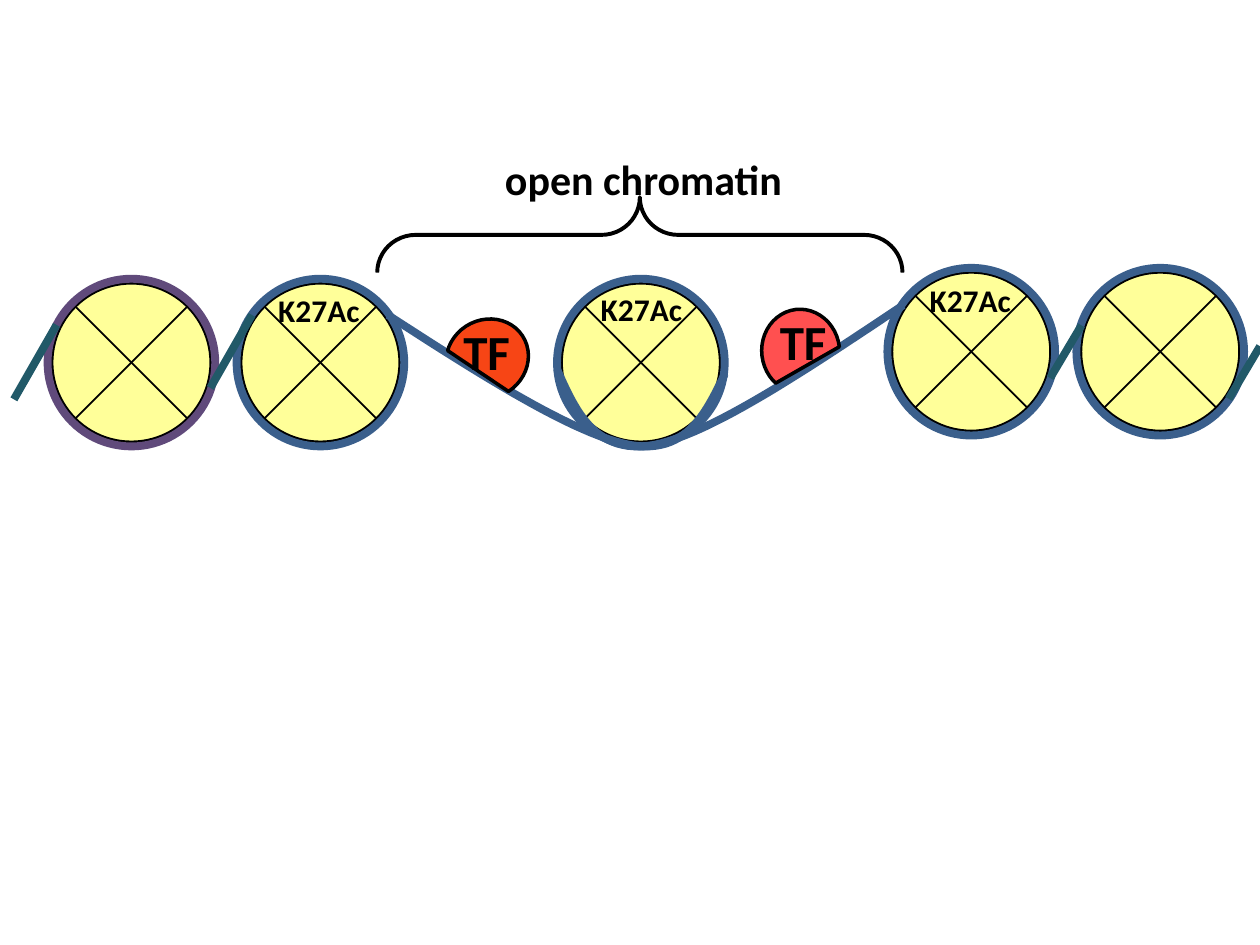
import pptx
import pptx.dml.color
import pptx.enum.shapes
import pptx.enum.text
import pptx.oxml.ns
import pptx.util
from lxml import etree

Cm, Pt = pptx.util.Cm, pptx.util.Pt
RGB = pptx.dml.color.RGBColor.from_string
MSO = pptx.enum.shapes.MSO_SHAPE

THEME = {
    "black": "000000", "core": "FFFF99", "purple": "604A7B", "blue": "3A5F8C",
    "teal": "215968", "orange": "F74515", "red": "FF5050",
    "font": "Calibri", "dna": 4.5, "cross": 1, "factor": 2, "brace": 2.25,
    "mark_size": 18, "title_size": 24, "factor_size": 28,
}

# Content, all lengths in cm
DISC, RING_GAP = 3.18, 0.1
NUCLEOSOMES = [  # left, top, ring colour
    (1.06, 5.72, "purple"), (4.87, 5.72, "blue"), (11.33, 5.72, "blue"),
    (17.99, 5.5, "blue"), (21.8, 5.5, "blue"),
]
LINKERS = [  # x1, y1, x2, y2
    (4.24, 7.82, 5.08, 6.35), (0.28, 8.05, 1.14, 6.55),
    (21.17, 7.62, 21.8, 6.56), (24.77, 8.04, 25.4, 6.98),
]
OPEN_DNA = [  # start, then two cubic curves of three points each
    [(7.82, 6.35), (9.7, 7.57), (11.58, 8.76), (12.7, 8.97),
     (13.82, 9.17), (14.22, 8.36), (14.61, 7.54)],
    [(18.21, 6.15), (16.28, 7.44), (14.35, 8.74), (13.18, 8.97),
     (12.01, 9.17), (11.61, 8.31), (11.23, 7.44)],
]
FACTORS = [  # left, top, rotation, fill
    (8.97, 6.45, 146.8, "orange"), (15.29, 6.3, 83.2, "red"),
]
BRACE = (12.14, -0.56, 1.52, 10.59)
LABELS = [  # text, left, top, width, height, size
    ("TF", 9.09, 6.35, 1.47, 1.45, "factor_size"),
    ("TF", 15.47, 6.15, 1.47, 1.45, "factor_size"),
    ("K27Ac", 5.36, 5.74, 2.16, 1.02, "mark_size"),
    ("K27Ac", 11.86, 5.72, 2.16, 1.02, "mark_size"),
    ("K27Ac", 18.49, 5.54, 2.16, 1.02, "mark_size"),
    ("open chromatin", 9.93, 2.97, 6.15, 1.27, "title_size"),
]


def assign(obj, values):
    for name, value in values.items():
        setattr(obj, name, value)


def style_line(sp, color, width):
    sp.line.color.rgb = RGB(THEME[color])
    sp.line.width = Pt(THEME[width])


def add_shape(kind, box, color, width, fill=None, rotation=0):
    sp = shapes.add_shape(kind, *map(Cm, box))
    sp.shadow.inherit = False
    sp.rotation = rotation
    if fill:
        sp.fill.solid()
        sp.fill.fore_color.rgb = RGB(THEME[fill])
    else:
        sp.fill.background()
    style_line(sp, color, width)
    return sp


def bezier(p0, p1, p2, p3, steps=24):
    """Points along a cubic curve, without its start."""
    for i in range(1, steps + 1):
        t = i / steps
        u = 1 - t
        yield tuple(u**3 * a + 3 * u * u * t * b + 3 * u * t * t * c + t**3 * d
                    for a, b, c, d in zip(p0, p1, p2, p3))


prs = pptx.Presentation()
assign(prs, {"slide_width": Cm(25.4), "slide_height": Cm(19.05)})
shapes = prs.slides.add_slide(prs.slide_layouts[6]).shapes

# Nucleosomes: dark rim, crossed core, DNA ring
for left, top, ring in NUCLEOSOMES:
    disc = (left, top, DISC, DISC)
    outer = (left - RING_GAP, top - RING_GAP,
             DISC + 2 * RING_GAP, DISC + 2 * RING_GAP)
    add_shape(MSO.FLOWCHART_CONNECTOR, disc, "black", "dna")
    add_shape(MSO.FLOWCHART_SUMMING_JUNCTION, disc, "black", "cross", "core")
    add_shape(MSO.FLOWCHART_CONNECTOR, outer, ring, "dna")

# Linker DNA
for ends in LINKERS:
    line = shapes.add_connector(pptx.enum.shapes.MSO_CONNECTOR.STRAIGHT,
                                *map(Cm, ends))
    style_line(line, "teal", "dna")
    etree.SubElement(line._element.spPr, pptx.oxml.ns.qn("a:effectLst"))

# Open DNA strands
for pts in OPEN_DNA:
    curve = [*bezier(*pts[:4]), *bezier(*pts[3:])]
    builder = shapes.build_freeform(*map(Cm, pts[0]))
    builder.add_line_segments([(Cm(x), Cm(y)) for x, y in curve], close=False)
    sp = builder.convert_to_shape()
    sp.shadow.inherit = False
    sp.fill.background()
    style_line(sp, "blue", "dna")

# Transcription factors
for left, top, rotation, fill in FACTORS:
    add_shape(MSO.CHORD, (left, top, 1.7, 1.57), "black", "factor", fill, rotation)

# Brace over the open region
sp = add_shape(MSO.RIGHT_BRACE, BRACE, "black", "brace", rotation=270)
sp.adjustments[0], sp.adjustments[1] = 0.51, 0.5

# Labels
for text, left, top, width, height, size in LABELS:
    tf = shapes.add_textbox(*map(Cm, (left, top, width, height))).text_frame
    assign(tf, {"word_wrap": False,
                "auto_size": pptx.enum.text.MSO_AUTO_SIZE.SHAPE_TO_FIT_TEXT})
    r = tf.paragraphs[0].add_run()
    r.text = text
    assign(r.font, {"name": THEME["font"], "size": Pt(THEME[size]), "bold": True})
    r.font.color.rgb = RGB(THEME["black"])

prs.save("out.pptx")
